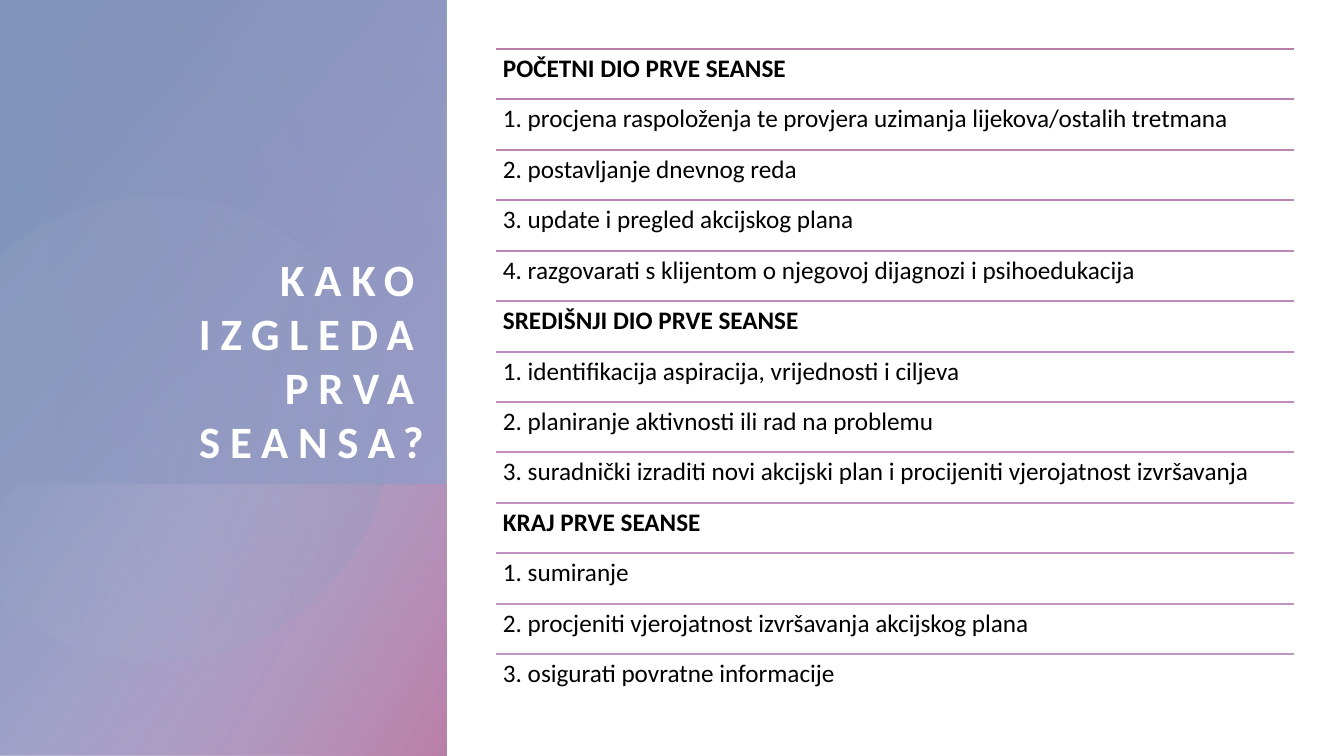
import math
from lxml import etree
from pptx import Presentation
from pptx.dml.color import RGBColor
from pptx.enum.shapes import MSO_CONNECTOR, MSO_SHAPE
from pptx.enum.text import MSO_ANCHOR, PP_ALIGN
from pptx.oxml import parse_xml
from pptx.oxml.ns import qn
from pptx.util import Pt

PX = 914400 / 100.8
NS = "http://schemas.openxmlformats.org/drawingml/2006/main"
RECT, LINE = MSO_SHAPE.RECTANGLE, MSO_CONNECTOR.STRAIGHT
TOP, BOTTOM = MSO_ANCHOR.TOP, MSO_ANCHOR.BOTTOM
LEFT, RIGHT = PP_ALIGN.LEFT, PP_ALIGN.RIGHT


def add_text(text, box, size, color, bold=False, align=LEFT, anchor=TOP,
             inset=0, line_spacing=1.0, tracking=0):
    tf = slide.shapes.add_textbox(*[round(v * PX) for v in box]).text_frame
    tf.word_wrap = True
    tf.vertical_anchor = anchor
    tf.margin_left = tf.margin_right = tf.margin_top = tf.margin_bottom = round(inset * PX)
    p = tf.paragraphs[0]
    p.alignment = align
    p.line_spacing = line_spacing
    r = p.add_run()
    r.text = text
    r.font.name = "Calibri"
    r.font.size = Pt(size)
    r.font.bold = bold
    r.font.color.rgb = RGBColor.from_string(color)
    if tracking:
        r.font._element.set("spc", str(tracking * 100))


def fill_gradient(sp, stops, angle):
    sp.shadow.inherit = False
    sp.line.fill.background()
    gs = "".join(
        f'<a:gs pos="{pos * 1000}"><a:srgbClr val="{color}">'
        f'<a:alpha val="{alpha * 1000}"/></a:srgbClr></a:gs>'
        for pos, color, alpha in stops)
    grad = parse_xml(f'<a:gradFill xmlns:a="{NS}" rotWithShape="1"><a:gsLst>{gs}</a:gsLst>'
                     f'<a:lin ang="{angle * 60000}" scaled="0"/></a:gradFill>')
    sp._element.spPr.find(qn("a:ln")).addprevious(grad)


prs = Presentation()
prs.slide_width, prs.slide_height = round(1344 * PX), round(756 * PX)
slide = prs.slides.add_slide(prs.slide_layouts[6])

panel_box, corner_box, veil_box = (0, 0, 446, 756), (0, 485, 446, 271), (50, 0, 395, 485)
panel, corner = [
    slide.shapes.add_shape(RECT, *[round(v * PX) for v in box])
    for box in (panel_box, corner_box)]
fill_gradient(panel, [(8, "7F96BA", 100), (100, "9896C6", 89)], 40)
fill_gradient(corner, [(0, "C1C0DD", 0), (99, "BA7FA9", 100)], 30)

cx, cy, radius = 157, 428, 232
reach = math.acos(-cx / radius)
arc = []
for step in range(91):
    a = -reach + 2 * reach * step / 90
    arc.append((max(0, round(cx + radius * math.cos(a))), round(cy + radius * math.sin(a))))
fb = slide.shapes.build_freeform(*arc[0], scale=PX)
fb.add_line_segments(arc[1:], close=True)
circle = fb.convert_to_shape()
fill_gradient(circle, [(36, "B2C0D6", 6), (100, "7F96BA", 26)], 14)

veil = slide.shapes.add_shape(RECT, *[round(v * PX) for v in veil_box])
fill_gradient(veil, [(0, "9896C6", 29), (100, "997FBA", 0)], 160)

add_text("KAKO IZGLEDA PRVA SEANSA?", (50, 96, 374, 371), 32, "FFFFFF",
         bold=True, align=RIGHT, anchor=BOTTOM, tracking=7)

agenda = [
    ("POČETNI DIO PRVE SEANSE", "BA7FA9"),
    ("1. procjena raspoloženja te provjera uzimanja lijekova/ostalih tretmana", "BB81AC"),
    ("2. postavljanje dnevnog reda", "BC83AF"),
    ("3. update i pregled akcijskog plana", "BD85B3"),
    ("4. razgovarati s klijentom o njegovoj dijagnozi i psihoedukacija", "BE87B6"),
    ("SREDIŠNJI DIO PRVE SEANSE", "BF89B9"),
    ("1. identifikacija aspiracija, vrijednosti i ciljeva", "C08BBC"),
    ("2. planiranje aktivnosti ili rad na problemu", "C18CBF"),
    ("3. suradnički izraditi novi akcijski plan i procijeniti vjerojatnost izvršavanja", "C28EC1"),
    ("KRAJ PRVE SEANSE", "C290C3"),
    ("1. sumiranje", "C192C4"),
    ("2. procjeniti vjerojatnost izvršavanja akcijskog plana", "C194C5"),
    ("3. osigurati povratne informacije", "C096C6"),
]
left, width, first, last = 496, 798, 49, 654
for i, (text, color) in enumerate(agenda):
    y = round(first + (last - first) * i / (len(agenda) - 1))
    rule = slide.shapes.add_connector(
        LINE, *[round(v * PX) for v in (left, y, left + width, y)])
    rule.line.color.rgb = RGBColor.from_string(color)
    rule.line.width = Pt(1)
    etree.SubElement(rule._element.spPr, qn("a:effectLst"))
    add_text(text, (left, y, width, 50), 18, "000000",
             bold=text.isupper(), inset=7, line_spacing=0.9)

prs.save("out.pptx")
